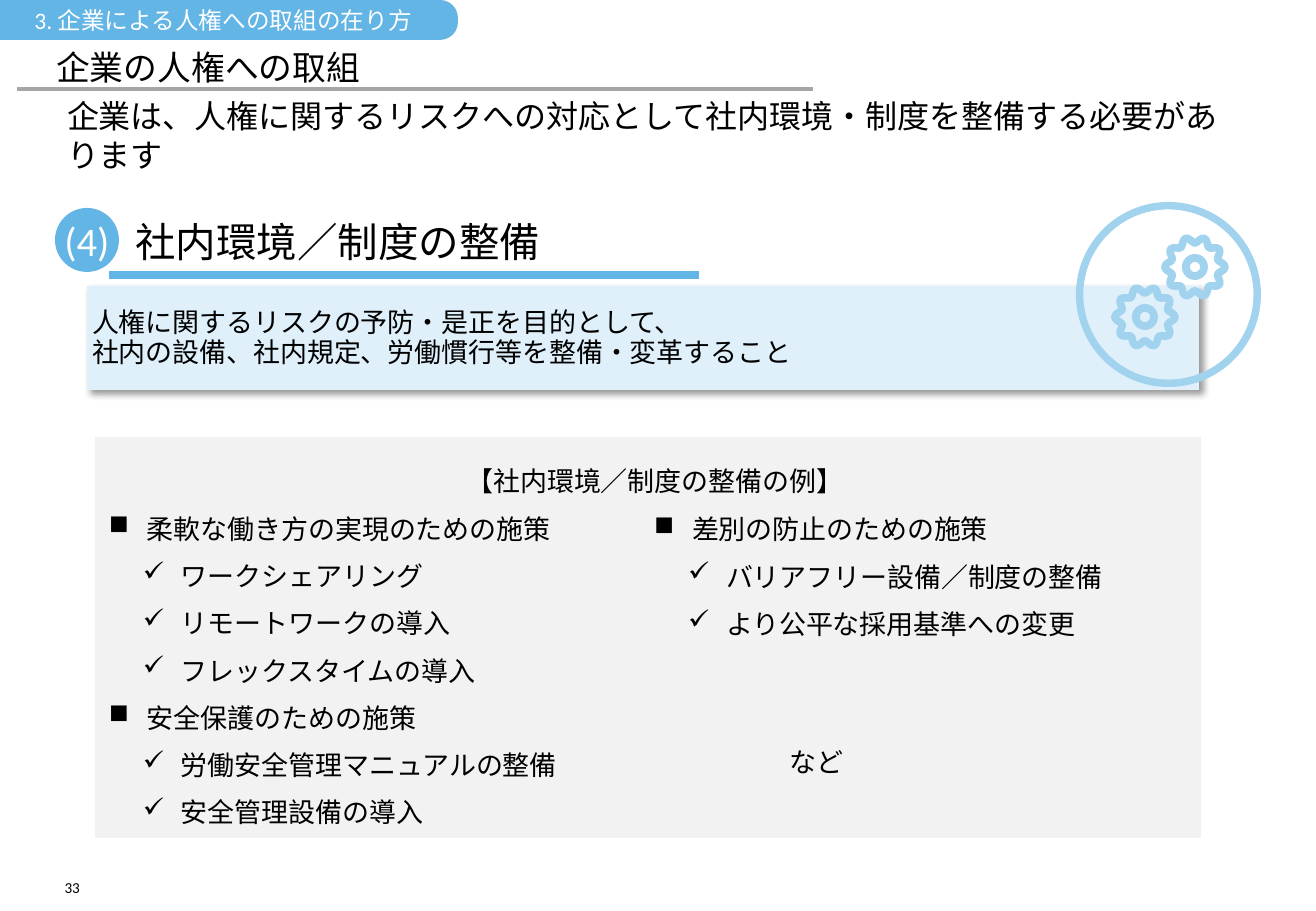
import math

from lxml import etree
from pptx import Presentation
from pptx import util as u
from pptx.dml.color import RGBColor
from pptx.enum import shapes, text
from pptx.oxml import ns

PX = 7526
FONT = "Calibri"
BLACK = RGBColor(0x00, 0x00, 0x00)
WHITE = RGBColor(0xFF, 0xFF, 0xFF)
BLUE = RGBColor(0x62, 0xB5, 0xE5)
LIGHT_BLUE = RGBColor(0xA1, 0xD3, 0xEF)
PALE_BLUE = RGBColor(0xE0, 0xF0, 0xFA)
LIGHT_GRAY = RGBColor(0xF2, 0xF2, 0xF2)
RULE_GRAY = RGBColor(0xA6, 0xA6, 0xA6)
LEFT, CENTER, RIGHT = text.PP_ALIGN.LEFT, text.PP_ALIGN.CENTER, text.PP_ALIGN.RIGHT
TOP, MIDDLE, BOTTOM = text.MSO_ANCHOR.TOP, text.MSO_ANCHOR.MIDDLE, text.MSO_ANCHOR.BOTTOM

presentation = Presentation()
presentation.slide_width, presentation.slide_height = 1316 * PX, 911 * PX
slide = presentation.slides.add_slide(presentation.slide_layouts[5])


def add_filled(kind, box, color):
    shape = slide.shapes.add_shape(kind, *(value * PX for value in box))
    shape.shadow.inherit = False
    shape.fill.solid()
    shape.fill.fore_color.rgb = color
    shape.line.fill.background()
    return shape


def write(shape, lines, size, color=BLACK, align=LEFT, anchor=TOP,
          insets=(0, 0, 0, 0), spacing=None, wrap=True):
    frame = shape.text_frame
    frame.auto_size = text.MSO_AUTO_SIZE.NONE
    frame.word_wrap = wrap
    frame.vertical_anchor = anchor
    (frame.margin_left, frame.margin_top,
     frame.margin_right, frame.margin_bottom) = (value * PX for value in insets)
    for index, (level, words) in enumerate(lines):
        paragraph = frame.paragraphs[0] if index == 0 else frame.add_paragraph()
        paragraph.alignment = LEFT if level else align
        if spacing:
            paragraph.line_spacing = u.Pt(spacing)
        if level and index:
            paragraph.space_before = u.Pt(10)
        if level:
            properties = paragraph._p.get_or_add_pPr()
            properties.set("marL", str((38, 72)[level - 1] * PX))
            properties.set("indent", str(-38 * PX))
            bullet = etree.SubElement(properties, ns.qn("a:buChar"))
            bullet.set("char", "■✓"[level - 1])
        run = paragraph.add_run()
        run.text = words
        run.font.size = u.Pt(size)
        run.font.color.rgb = color
        run.font.name = FONT
        east_asian = etree.SubElement(run._r.get_or_add_rPr(), ns.qn("a:ea"))
        east_asian.set("typeface", FONT)


title = slide.shapes.title
title.left, title.top, title.width, title.height = (value * PX for value in (56, 40, 1205, 47))
write(title, [(0, "企業の人権への取組")], 20, anchor=BOTTOM)

page_number = slide.shapes.add_textbox(56 * PX, 874 * PX, 24 * PX, 23 * PX)
write(page_number, [(0, "33")], 9, align=RIGHT, anchor=BOTTOM, wrap=False)

message = slide.shapes.add_textbox(55 * PX, 91 * PX, 1205 * PX, 90 * PX)
write(message, [(0, "企業は、人権に関するリスクへの対応として社内環境・制度を整備する必要があります")],
      19, insets=(12, 6, 12, 6))

purpose = add_filled(shapes.MSO_SHAPE.RECTANGLE, (87, 286, 1112, 104), PALE_BLUE)
effects = purpose._element.spPr.find(ns.qn("a:effectLst"))
shadow = etree.SubElement(effects, ns.qn("a:outerShdw"), blurRad=str(u.Pt(4)),
                          dist=str(u.Pt(3)), dir="2700000", algn="tl", rotWithShape="0")
shadow_color = etree.SubElement(shadow, ns.qn("a:srgbClr"), val=str(BLACK))
etree.SubElement(shadow_color, ns.qn("a:alpha"), val="40000")
write(purpose, [(0, "人権に関するリスクの予防・是正を目的として、"),
                (0, "社内の設備、社内規定、労働慣行等を整備・変革すること")],
      16, anchor=MIDDLE, insets=(5, 5, 5, 5), spacing=18)

section = slide.shapes.add_textbox(130 * PX, 211 * PX, 577 * PX, 60 * PX)
write(section, [(0, "社内環境／制度の整備")], 24, anchor=MIDDLE, insets=(5, 5, 5, 5))

number = add_filled(shapes.MSO_SHAPE.OVAL, (55, 208, 64, 64), BLUE)
write(number, [(0, "(4)")], 24, WHITE, CENTER, MIDDLE, wrap=False)

for start, end, y, color, width in [(17, 813, 89, RULE_GRAY, 2.25), (109, 699, 275, BLUE, 4.5)]:
    rule = slide.shapes.add_connector(shapes.MSO_CONNECTOR.STRAIGHT,
                                      start * PX, y * PX, end * PX, y * PX)
    rule.line.color.rgb = color
    rule.line.width = u.Pt(width)
    etree.SubElement(rule._element.spPr, ns.qn("a:effectLst"))

examples = add_filled(shapes.MSO_SHAPE.RECTANGLE, (95, 437, 1106, 401), LIGHT_GRAY)
write(examples, [
    (0, "【社内環境／制度の整備の例】"),
    (1, "柔軟な働き方の実現のための施策"),
    (2, "ワークシェアリング"),
    (2, "リモートワークの導入"),
    (2, "フレックスタイムの導入"),
    (1, "安全保護のための施策"),
    (2, "労働安全管理マニュアルの整備"),
    (2, "安全管理設備の導入"),
], 16, align=CENTER, insets=(14, 30, 0, 0), spacing=18)

more_examples = slide.shapes.add_textbox(640 * PX, 515 * PX, 553 * PX, 140 * PX)
write(more_examples, [
    (1, "差別の防止のための施策"),
    (2, "バリアフリー設備／制度の整備"),
    (2, "より公平な採用基準への変更"),
], 16, insets=(14, 0, 0, 0), spacing=18)

and_so_on = slide.shapes.add_textbox(790 * PX, 748 * PX, 70 * PX, 30 * PX)
write(and_so_on, [(0, "など")], 16, spacing=18)

ring = add_filled(shapes.MSO_SHAPE.DONUT, (1076, 202, 185, 185), LIGHT_BLUE)
ring.adjustments[0] = 0.04

TEETH, STEPS = 10, 160
for center_x, center_y in [(1145, 317), (1195, 267)]:
    points = []
    for step in range(STEPS):
        angle = 2 * math.pi * step / STEPS
        radius = 27 + 3 * math.cos(TEETH * angle)
        points.append(((center_x + radius * math.cos(angle)) * PX,
                       (center_y + radius * math.sin(angle)) * PX))
    builder = slide.shapes.build_freeform(*points[0])
    builder.add_line_segments(points[1:], close=True)
    gear = builder.convert_to_shape()
    gear.shadow.inherit = False
    gear.fill.background()
    gear.line.color.rgb = LIGHT_BLUE
    gear.line.width = u.Pt(4.5)
    hub = add_filled(shapes.MSO_SHAPE.DONUT, (center_x - 13, center_y - 13, 26, 26), LIGHT_BLUE)
    hub.adjustments[0] = 0.3

chapter = add_filled(shapes.MSO_SHAPE.ROUNDED_RECTANGLE, (-27, 0, 485, 40), BLUE)
chapter.adjustments[0] = 0.45
write(chapter, [(0, "3. 企業による人権への取組の在り方")], 14, WHITE,
      anchor=MIDDLE, insets=(56, 0, 0, 0))

presentation.save("out.pptx")
